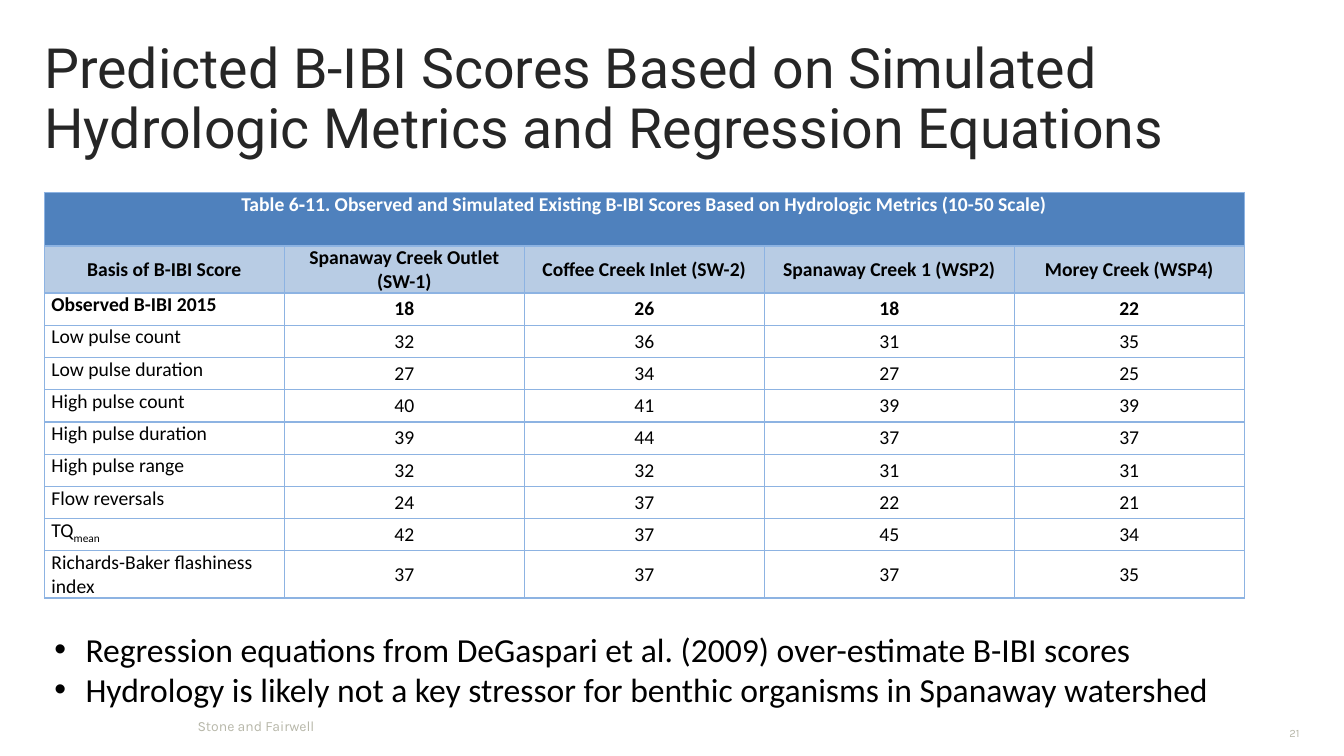
from lxml import etree
from pptx import Presentation
from pptx.dml.color import RGBColor
from pptx.enum.text import MSO_ANCHOR, PP_ALIGN
from pptx.oxml.ns import qn
from pptx.util import Inches, Pt

TITLE = "Predicted B-IBI Scores Based on Simulated Hydrologic Metrics and Regression Equations"
TAKEAWAYS = [
    "Regression equations from DeGaspari et al. (2009) over-estimate B-IBI scores",
    "Hydrology is likely not a key stressor for benthic organisms in Spanaway watershed",
]
FOOTER = "Stone and Fairwell"
PAGE_NUMBER = "21"

CAPTION = "Table 6‑11. Observed and Simulated Existing B-IBI Scores Based on Hydrologic Metrics (10-50 Scale)"
HEADINGS = ["Basis of B-IBI Score", "Spanaway Creek Outlet (SW-1)", "Coffee Creek Inlet (SW-2)",
            "Spanaway Creek 1 (WSP2)", "Morey Creek (WSP4)"]
# label, subscript, score at each site
SCORES = [
    ("Observed B-IBI 2015", "", (18, 26, 18, 22)),
    ("Low pulse count", "", (32, 36, 31, 35)),
    ("Low pulse duration", "", (27, 34, 27, 25)),
    ("High pulse count", "", (40, 41, 39, 39)),
    ("High pulse duration", "", (39, 44, 37, 37)),
    ("High pulse range", "", (32, 32, 31, 31)),
    ("Flow reversals", "", (24, 37, 22, 21)),
    ("TQ", "mean", (42, 37, 45, 34)),
    ("Richards-Baker flashiness index", "", (37, 37, 37, 35)),
]
COLUMN_WIDTHS = [2.38, 2.38, 2.38, 2.48, 2.28]
ROW_HEIGHTS = [0.53, 0.36] + [0.32] * len(SCORES)
LEFT = 0.44

THEME = {
    "title": ("Roboto", 39.6, "262626"),
    "bullet": ("Calibri", 24, "000000"),
    "caption": ("Calibri", 14, "FFFFFF"),
    "cell": ("Calibri", 14, "000000"),
    "footer": ("Karla", 10, "B7B7A9"),
    "number": ("Karla", 8, "B7B7A9"),
    "caption fill": "4F81BD",
    "heading fill": "B8CCE4",
    "border": "8DB3E2",
}


def add_span(para, text, style, bold=False):
    span = para.add_run()
    span.text = text
    name, size, color = THEME[style]
    span.font.name, span.font.size, span.font.bold = name, Pt(size), bold
    span.font.color.rgb = RGBColor.from_string(color)
    return span


def add_box(page, place, anchor=MSO_ANCHOR.MIDDLE, side_margin=0.0):
    frame = page.shapes.add_textbox(*map(Inches, place)).text_frame
    frame.word_wrap = True
    frame.vertical_anchor = anchor
    frame.margin_left = frame.margin_right = Inches(side_margin)
    return frame


def add_bullet(para, indent):
    properties = para._p.get_or_add_pPr()
    properties.set("marL", str(Inches(indent)))
    properties.set("indent", str(-Inches(indent)))
    etree.SubElement(properties, qn("a:buFont")).set("typeface", "Arial")
    etree.SubElement(properties, qn("a:buChar")).set("char", "•")


def frame_cell(cell, fill):
    """Set the fill, margins and four borders of a table cell."""
    cell.margin_left = cell.margin_right = Inches(0.07)
    cell.margin_top = cell.margin_bottom = 0
    properties = cell._tc.get_or_add_tcPr()
    for side in ("a:lnL", "a:lnR", "a:lnT", "a:lnB"):
        line = etree.SubElement(properties, qn(side))
        line.set("w", str(Pt(1)))
        solid = etree.SubElement(line, qn("a:solidFill"))
        etree.SubElement(solid, qn("a:srgbClr")).set("val", THEME["border"])
    if fill:
        cell.fill.solid()
        cell.fill.fore_color.rgb = RGBColor.from_string(THEME[fill])
    else:
        cell.fill.background()


def write_cell(cell, text, style="cell", bold=False, centered=True, anchor=MSO_ANCHOR.MIDDLE):
    cell.vertical_anchor = anchor
    para = cell.text_frame.paragraphs[0]
    para.alignment = PP_ALIGN.CENTER if centered else PP_ALIGN.LEFT
    add_span(para, text, style, bold)
    return para


def add_score_table(page):
    place = (LEFT, 1.91, sum(COLUMN_WIDTHS), sum(ROW_HEIGHTS))
    table = page.shapes.add_table(len(ROW_HEIGHTS), len(COLUMN_WIDTHS), *map(Inches, place)).table
    for column, width in zip(table.columns, COLUMN_WIDTHS):
        column.width = Inches(width)
    row_fills = ["caption fill", "heading fill"] + [None] * len(SCORES)
    for row, height, fill in zip(table.rows, ROW_HEIGHTS, row_fills):
        row.height = Inches(height)
        for cell in row.cells:
            frame_cell(cell, fill)

    table.cell(0, 0).merge(table.cell(0, len(HEADINGS) - 1))
    write_cell(table.cell(0, 0), CAPTION, "caption", bold=True, anchor=MSO_ANCHOR.TOP)
    for column, heading in enumerate(HEADINGS):
        write_cell(table.cell(1, column), heading, bold=True)
    for row, (label, subscript, scores) in enumerate(SCORES, start=2):
        observed = row == 2
        para = write_cell(table.cell(row, 0), label, bold=observed,
                          centered=False, anchor=MSO_ANCHOR.TOP)
        if subscript:
            span = add_span(para, subscript, "cell")
            span.font._element.set("baseline", "-25000")
        for column, score in enumerate(scores, start=1):
            write_cell(table.cell(row, column), str(score), bold=observed)


def main():
    deck = Presentation()
    deck.slide_width, deck.slide_height = Inches(13.33), Inches(7.5)
    page = deck.slides.add_slide(deck.slide_layouts[6])

    title = add_box(page, (LEFT, 0.5, 12.58, 1)).paragraphs[0]
    title.line_spacing = 0.9
    add_span(title, TITLE, "title")

    add_span(add_box(page, (1.96, 7.09, 8.83, 0.23)).paragraphs[0], FOOTER, "footer")
    number = add_box(page, (12.33, 7.15, 0.56, 0.25)).paragraphs[0]
    number.alignment = PP_ALIGN.RIGHT
    add_span(number, PAGE_NUMBER, "number")

    takeaways = add_box(page, (LEFT, 6.19, 11.89, 0.91), MSO_ANCHOR.TOP, side_margin=0.1)
    for index, text in enumerate(TAKEAWAYS):
        para = takeaways.add_paragraph() if index else takeaways.paragraphs[0]
        add_bullet(para, 0.31)
        add_span(para, text, "bullet")

    add_score_table(page)
    deck.save("out.pptx")


if __name__ == "__main__":
    main()
